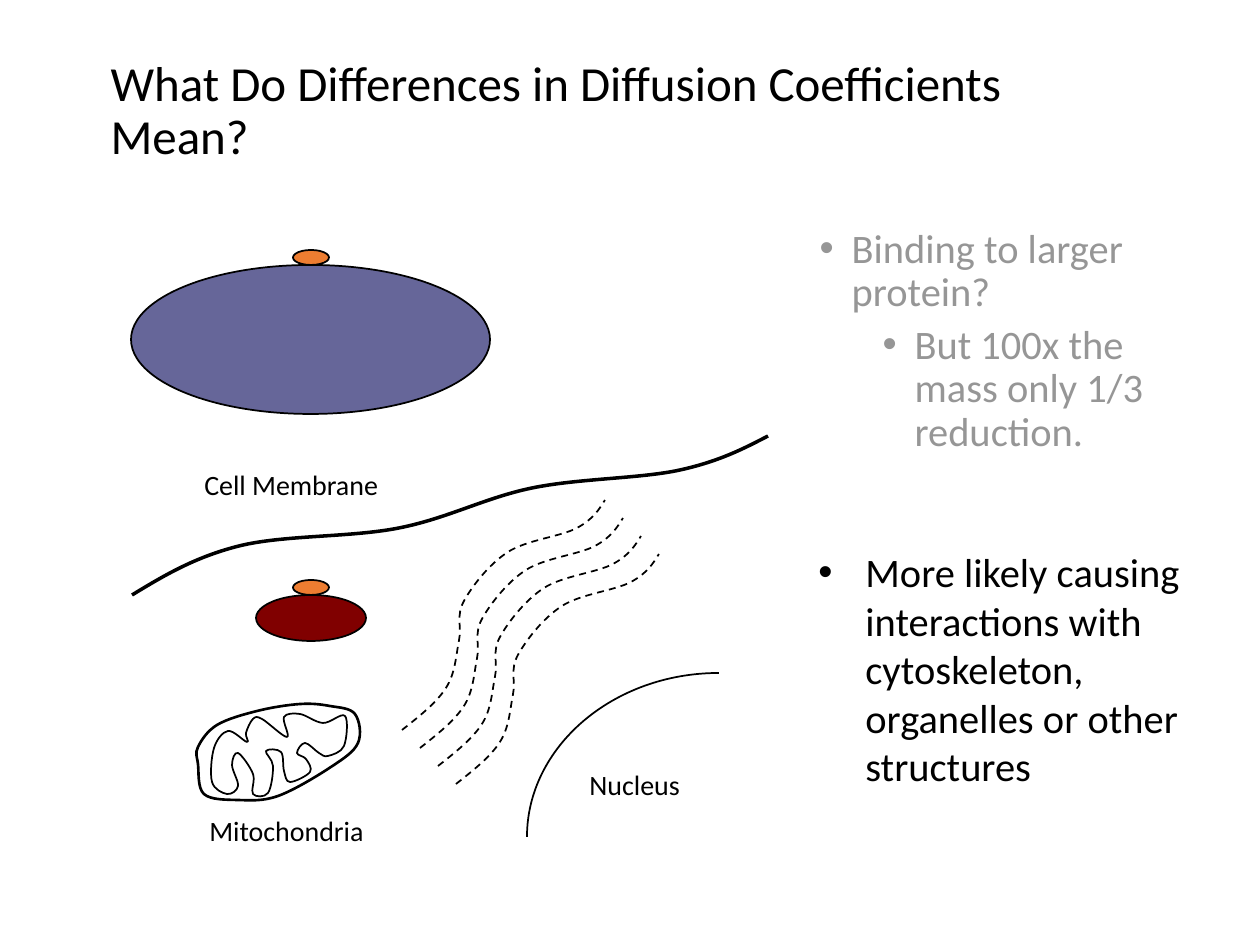
"""Build the slide on what differences in diffusion coefficients mean."""
from lxml.etree import SubElement
from pptx import Presentation
from pptx.dml.color import RGBColor
from pptx.enum.dml import MSO_LINE
from pptx.enum.shapes import MSO_SHAPE
from pptx.enum.text import MSO_ANCHOR, MSO_AUTO_SIZE, PP_ALIGN
from pptx.oxml.ns import qn
from pptx.util import Emu, Pt

SCALE = 914400 / 126
BLACK = RGBColor(0x00, 0x00, 0x00)
GRAY = RGBColor(0x96, 0x96, 0x96)
PURPLE = RGBColor(0x66, 0x66, 0x99)
MAROON = RGBColor(0x80, 0x00, 0x00)
ORANGE = RGBColor(0xED, 0x7D, 0x31)


def px(length):
    return Emu(round(length * SCALE))


def add_curve(shapes, knots, width, closed=False):
    """Draw a smooth outline whose first and last knots only steer the ends."""
    anchors = [(px(x), px(y)) for x, y in knots[1:-1]]
    builder = shapes.build_freeform(*anchors[0])
    builder.add_line_segments(anchors[1:], close=closed)
    curve = builder.convert_to_shape()
    segments = zip(knots, knots[1:], knots[2:], knots[3:])
    lines = list(curve._element.iter(qn("a:lnTo")))
    for line, (before, start, end, after) in zip(lines, segments):
        line.tag = qn("a:cubicBezTo")
        leaving = [s + (e - b) / 6 for b, s, e in zip(before, start, end)]
        arriving = [e - (a - s) / 6 for s, e, a in zip(start, end, after)]
        for position, (x, y) in enumerate((leaving, arriving)):
            point = SubElement(line, qn("a:pt"))
            point.set("x", str(px(x) - curve.left))
            point.set("y", str(px(y) - curve.top))
            line.insert(position, point)
    curve.shadow.inherit = False
    curve.fill.background()
    curve.line.color.rgb = BLACK
    curve.line.width = Pt(width)
    return curve


deck = Presentation()
deck.slide_width, deck.slide_height = px(1260), px(945)
slide = deck.slides.add_slide(deck.slide_layouts[1])
shapes = slide.shapes

title = shapes.title
body = slide.placeholders[1]
causes = shapes.add_textbox(px(806), px(541), px(408), px(319))
for box, bounds in ((title, (98, 53, 1063, 140)), (body, (807, 222, 397, 352))):
    box.left, box.top, box.width, box.height = map(px, bounds)
for box in (title, body, causes):
    box.text_frame.word_wrap = True
    box.text_frame.auto_size = MSO_AUTO_SIZE.NONE
    box.text_frame.vertical_anchor = MSO_ANCHOR.TOP

title.text_frame.text = "What Do Differences in Diffusion Coefficients Mean?"
body.text_frame.text = "Binding to larger protein?\nBut 100x the mass only 1/3 reduction."
causes.text_frame.text = (
    "More likely causing interactions with cytoskeleton, organelles or other structures"
)
heading = title.text_frame.paragraphs[0]
question, answer = body.text_frame.paragraphs
cause = causes.text_frame.paragraphs[0]
answer.level = 1

for para, margin, hanging in ((question, 32, 32), (answer, 95, 32), (cause, 47, 47)):
    properties = para._p.get_or_add_pPr()
    properties.set("marL", str(px(margin)))
    properties.set("indent", str(-px(hanging)))
    SubElement(properties, qn("a:buFont")).set("typeface", "Arial")
    SubElement(properties, qn("a:buChar")).set("char", "•")

for para, size, color, spacing, before in (
    (heading, 28, BLACK, 0.9, 0),
    (question, 23.1, GRAY, 0.9, 0),
    (answer, 23.1, GRAY, 0.9, 5),
    (cause, 23.1, BLACK, 1.0, 0),
):
    para.alignment = PP_ALIGN.LEFT
    para.line_spacing = spacing
    para.space_before = Pt(before)
    para.font.name = "Calibri"
    para.font.size = Pt(size)
    para.font.color.rgb = color

nucleus = [(1163, 837), (719, 673), (527, 837), (719, 1213)]
membrane = [(132, 595), (239, 546), (399, 528), (532, 488), (680, 470), (768, 436)]
inner_mitochondrion = [
    (214, 748), (212, 782), (227, 794), (238, 786), (232, 765), (238, 753),
    (253, 774), (253, 794), (268, 793), (273, 766), (266, 751), (281, 752),
    (284, 771), (290, 782), (310, 772), (306, 759), (297, 753), (305, 743),
    (319, 753), (328, 756), (344, 746), (345, 716), (323, 723), (300, 714),
    (284, 717), (287, 737), (262, 719), (253, 719), (246, 733), (247, 742),
    (228, 731),
]
outer_mitochondrion = [
    (198, 747), (217, 725), (257, 711), (300, 704), (330, 706), (355, 714),
    (358, 743), (331, 767), (278, 796), (238, 800), (204, 794), (198, 764),
]
filament = [
    (402, 730), (446, 688), (459, 641), (464, 601), (508, 552), (577, 528), (605, 500),
]

for line in (membrane, filament):
    lead_in, lead_out = (
        tuple(2.5 * a - 2 * b + 0.5 * c for a, b, c in zip(*ends))
        for ends in (line[:3], line[:-4:-1])
    )
    line.insert(0, lead_in)
    line.append(lead_out)

add_curve(shapes, nucleus, 1)
add_curve(shapes, membrane, 2)
for outline, width in ((inner_mitochondrion, 1), (outer_mitochondrion, 1.5)):
    add_curve(shapes, [outline[-1], *outline, *outline[:2]], width, closed=True)
for offset in range(0, 72, 18):
    strand = add_curve(shapes, [(x + offset, y + offset) for x, y in filament], 1)
    strand.line.dash_style = MSO_LINE.DASH

for label, left, top, width in (
    ("Nucleus", 577, 761, 117),
    ("Cell Membrane", 192, 461, 202),
    ("Mitochondria", 197, 807, 181),
):
    box = shapes.add_textbox(px(left), px(top), px(width), px(47))
    box.text_frame.word_wrap = False
    box.text_frame.auto_size = MSO_AUTO_SIZE.SHAPE_TO_FIT_TEXT
    para = box.text_frame.paragraphs[0]
    para.text = label
    para.font.name = "Calibri"
    para.font.size = Pt(16)
    para.font.color.rgb = BLACK

for color, bounds in (
    (MAROON, (256, 595, 110, 46)),
    (ORANGE, (293, 580, 36, 15)),
    (PURPLE, (131, 265, 359, 149)),
    (ORANGE, (293, 250, 36, 15)),
):
    protein = shapes.add_shape(MSO_SHAPE.OVAL, *map(px, bounds))
    protein.shadow.inherit = False
    protein.fill.solid()
    protein.fill.fore_color.rgb = color
    protein.line.color.rgb = BLACK
    protein.line.width = Pt(1)

deck.save("out.pptx")
